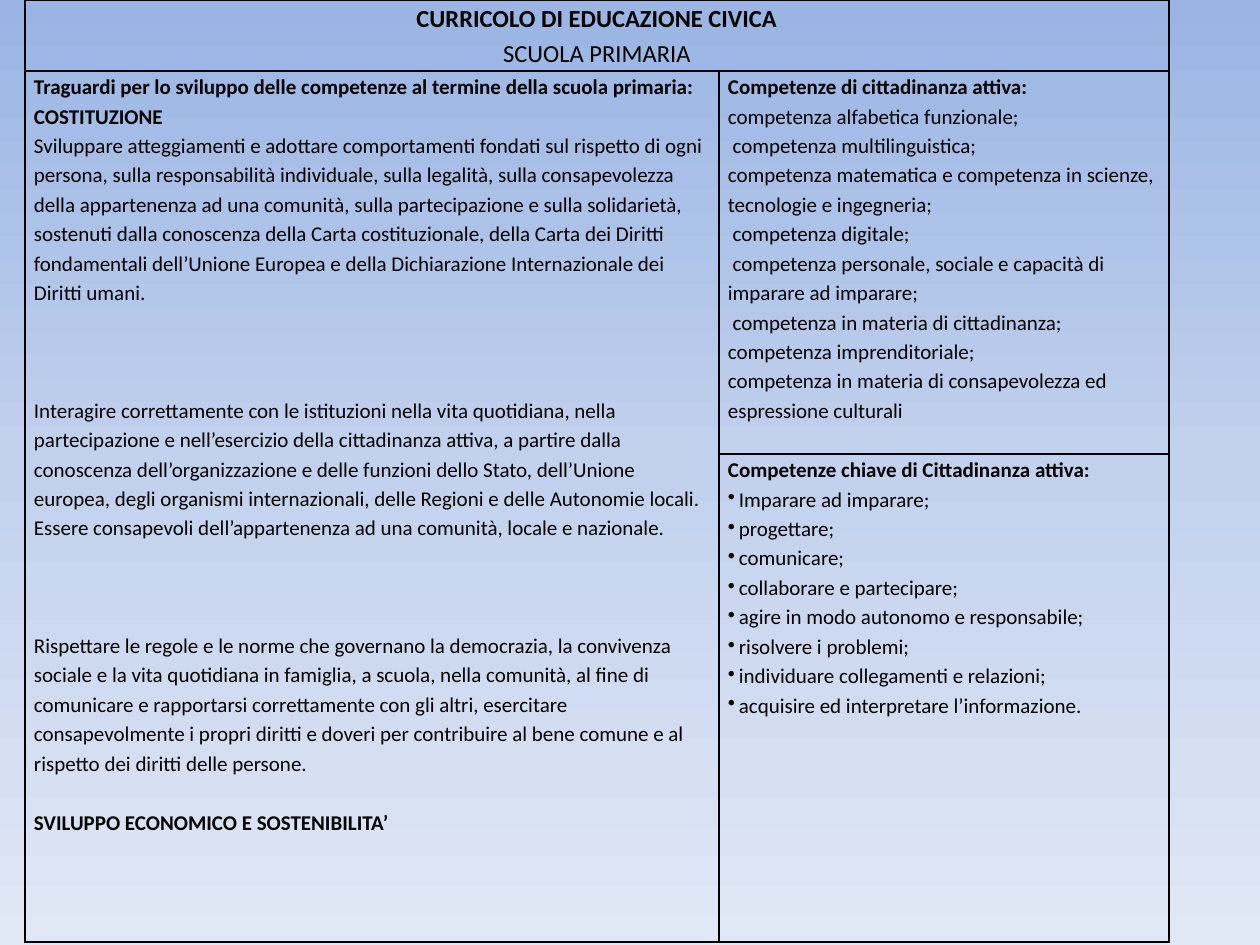
from copy import deepcopy

from lxml import etree
from pptx import Presentation
from pptx.dml.color import RGBColor
from pptx.enum.text import PP_ALIGN
from pptx.oxml.ns import qn
from pptx.util import Pt

PX = 914400 // 126
CENTER, LEFT = PP_ALIGN.CENTER, PP_ALIGN.LEFT
BLACK = RGBColor(0x00, 0x00, 0x00)
BACKGROUND_STOPS = [
    (0, RGBColor(0x9A, 0xB5, 0xE4)),
    (0.5, RGBColor(0xC2, 0xD1, 0xED)),
    (1, RGBColor(0xE1, 0xE8, 0xF5)),
]
FONT_NAME = "Calibri"
LINE_SPACING = 1.15
BLANK_LINE = 16.8  # height of one 12 pt line, in points
BULLET_INDENT = 11

# Content: each paragraph is (text, style, blank lines before it)
BOLD, PLAIN, BULLET = "bold", "plain", "bullet"
TITLE = [
    ("CURRICOLO DI EDUCAZIONE CIVICA", BOLD, 0),
    ("SCUOLA PRIMARIA", PLAIN, 0),
]
GOALS = [
    ("Traguardi per lo sviluppo delle competenze al termine della scuola primaria:", BOLD, 0),
    ("COSTITUZIONE", BOLD, 0),
    ("Sviluppare atteggiamenti e adottare comportamenti fondati sul rispetto di ogni "
     "persona, sulla responsabilità individuale, sulla legalità, sulla consapevolezza "
     "della appartenenza ad una comunità, sulla partecipazione e sulla solidarietà, "
     "sostenuti dalla conoscenza della Carta costituzionale, della Carta dei Diritti "
     "fondamentali dell’Unione Europea e della Dichiarazione Internazionale dei "
     "Diritti umani.", PLAIN, 0),
    ("Interagire correttamente con le istituzioni nella vita quotidiana, nella "
     "partecipazione e nell’esercizio della cittadinanza attiva, a partire dalla "
     "conoscenza dell’organizzazione e delle funzioni dello Stato, dell’Unione "
     "europea, degli organismi internazionali, delle Regioni e delle Autonomie locali. "
     "Essere consapevoli dell’appartenenza ad una comunità, locale e nazionale.", PLAIN, 3),
    ("Rispettare le regole e le norme che governano la democrazia, la convivenza "
     "sociale e la vita quotidiana in famiglia, a scuola, nella comunità, al fine di "
     "comunicare e rapportarsi correttamente con gli altri, esercitare "
     "consapevolmente i propri diritti e doveri per contribuire al bene comune e al "
     "rispetto dei diritti delle persone.", PLAIN, 3),
    ("SVILUPPO ECONOMICO E SOSTENIBILITA’", BOLD, 1),
]
ACTIVE_SKILLS = [("Competenze di cittadinanza attiva:", BOLD, 0)] + [
    (text, PLAIN, 0) for text in (
        "competenza alfabetica funzionale;",
        " competenza multilinguistica;",
        "competenza matematica e competenza in scienze, tecnologie e ingegneria;",
        " competenza digitale;",
        " competenza personale, sociale e capacità di imparare ad imparare;",
        " competenza in materia di cittadinanza;",
        "competenza imprenditoriale;",
        "competenza in materia di consapevolezza ed espressione culturali",
    )
]
KEY_SKILLS = [("Competenze chiave di Cittadinanza attiva:", BOLD, 0)] + [
    (text, BULLET, 0) for text in (
        "Imparare ad imparare;",
        "progettare;",
        "comunicare;",
        "collaborare e partecipare;",
        "agire in modo autonomo e responsabile;",
        "risolvere i problemi;",
        "individuare collegamenti e relazioni;",
        "acquisire ed interpretare l’informazione.",
    )
]

# Table geometry in px
TABLE_LEFT, TABLE_TOP = 25, 0
COLUMN_WIDTHS = [694, 450]
ROW_HEIGHTS = [71, 383, 488]
CELL_FORMAT = {"margin_left": 9 * PX, "margin_right": 9 * PX,
               "margin_top": 0, "margin_bottom": 0}
# (row, column, paragraphs, size in points, alignment)
CELLS = [
    (0, 0, TITLE, 14, CENTER),
    (1, 0, GOALS, 12, LEFT),
    (1, 1, ACTIVE_SKILLS, 12, LEFT),
    (2, 1, KEY_SKILLS, 12, LEFT),
]


def set_format(target, values):
    for name, value in values.items():
        setattr(target, name, value)


def paint_background(slide):
    fill = slide.background.fill
    fill.gradient()
    fill.gradient_angle = 270
    stop_list = fill._fill._gradFill.find(qn("a:gsLst"))
    stop_list.append(deepcopy(stop_list[-1]))
    for stop, (position, color) in zip(fill.gradient_stops, BACKGROUND_STOPS):
        stop.position = position
        stop.color.rgb = color


def add_borders(cell):
    properties = cell._tc.get_or_add_tcPr()
    for side in ("a:lnL", "a:lnR", "a:lnT", "a:lnB"):
        line = etree.SubElement(properties, qn(side), w=str(Pt(1)))
        fill = etree.SubElement(line, qn("a:solidFill"))
        etree.SubElement(fill, qn("a:srgbClr"), val=str(BLACK))


def add_bullet(paragraph):
    properties = paragraph._p.get_or_add_pPr()
    properties.set("marL", str(BULLET_INDENT * PX))
    properties.set("indent", str(-BULLET_INDENT * PX))
    etree.SubElement(properties, qn("a:buChar"), char="•")


def write_cell(cell, paragraphs, size, alignment):
    frame = cell.text_frame
    for index, (text, style, blank_lines) in enumerate(paragraphs):
        paragraph = frame.add_paragraph() if index else frame.paragraphs[0]
        set_format(paragraph, {"alignment": alignment, "line_spacing": LINE_SPACING,
                               "space_before": Pt(blank_lines * BLANK_LINE)})
        if style == BULLET:
            add_bullet(paragraph)
        run = paragraph.add_run()
        run.text = text
        set_format(run.font, {"name": FONT_NAME, "size": Pt(size), "bold": style == BOLD})
        run.font.color.rgb = BLACK


presentation = Presentation()
presentation.slide_width, presentation.slide_height = 1260 * PX, 945 * PX
slide = presentation.slides.add_slide(presentation.slide_layouts[6])
paint_background(slide)

# Table grid
table = slide.shapes.add_table(
    len(ROW_HEIGHTS), len(COLUMN_WIDTHS), TABLE_LEFT * PX, TABLE_TOP * PX,
    sum(COLUMN_WIDTHS) * PX, sum(ROW_HEIGHTS) * PX).table
set_format(table, {"first_row": False, "horz_banding": False})
for column, width in zip(table.columns, COLUMN_WIDTHS):
    column.width = width * PX
for row, height in zip(table.rows, ROW_HEIGHTS):
    row.height = height * PX
for cell in table.iter_cells():
    set_format(cell, CELL_FORMAT)
    add_borders(cell)
    cell.fill.background()
table.cell(0, 0).merge(table.cell(0, 1))
table.cell(1, 0).merge(table.cell(2, 0))

# Cell text
for row, column, paragraphs, size, alignment in CELLS:
    write_cell(table.cell(row, column), paragraphs, size, alignment)

presentation.save("out.pptx")
